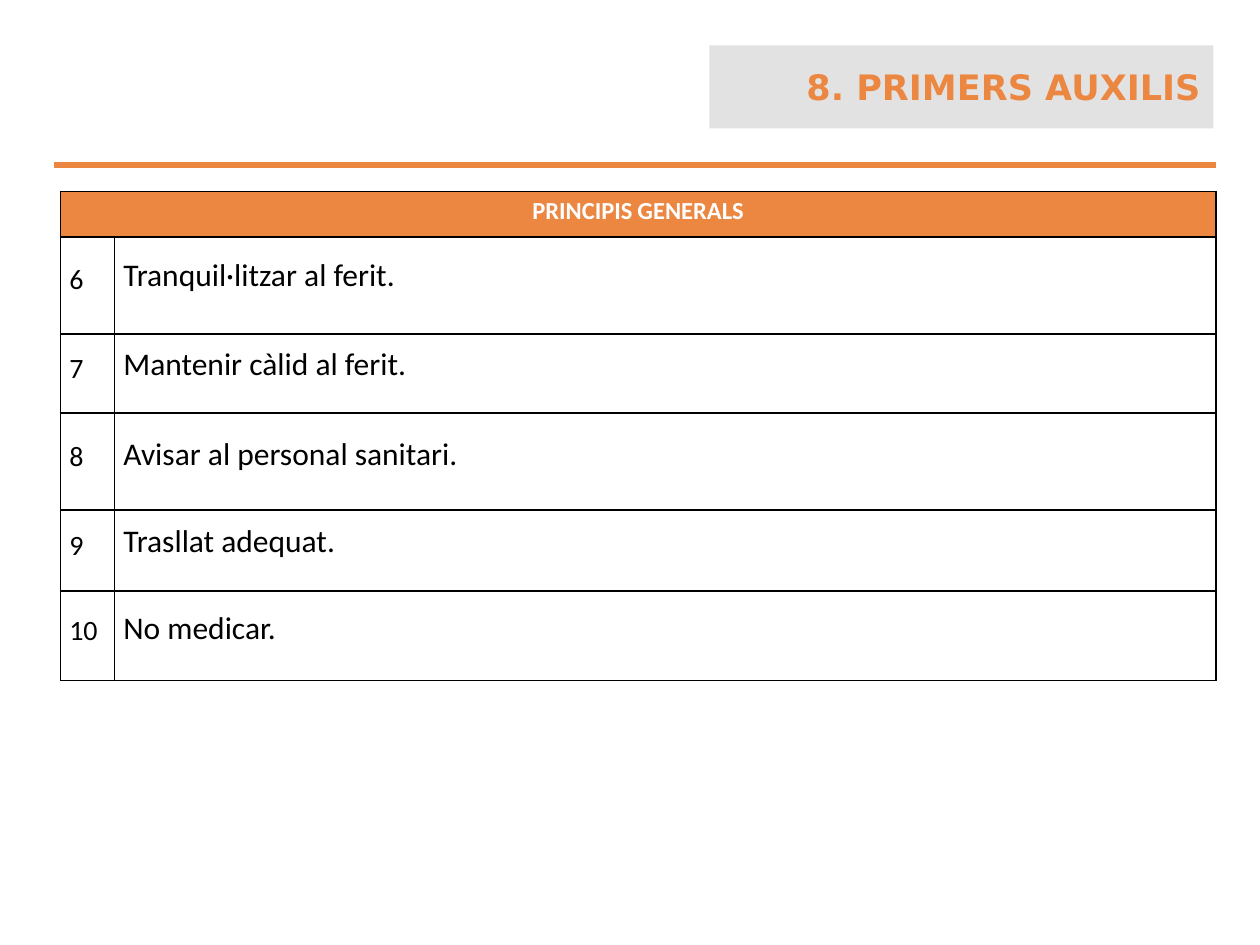
from lxml import etree
from pptx import Presentation
from pptx.dml.color import RGBColor
from pptx.enum.shapes import MSO_CONNECTOR
from pptx.enum.text import MSO_ANCHOR, MSO_AUTO_SIZE, PP_ALIGN
from pptx.oxml.ns import qn
from pptx.util import Inches, Pt

ORANGE = RGBColor(0xEC, 0x87, 0x41)
GREY = RGBColor(0xE2, 0xE2, 0xE2)
WHITE = RGBColor(0xFF, 0xFF, 0xFF)
BLACK = RGBColor(0, 0, 0)
MIDDLE, TOP = MSO_ANCHOR.MIDDLE, MSO_ANCHOR.TOP
CENTER, RIGHT, JUSTIFY = PP_ALIGN.CENTER, PP_ALIGN.RIGHT, PP_ALIGN.JUSTIFY

TITLE = "8. PRIMERS AUXILIS"
HEADING = [("PRINCIPIS", 14, True), (" ", 12, False), ("GENERALS", 14, True)]
FIRST_NUMBER = 6
# principle, row height, whether the text is raised by one line
PRINCIPLES = [
    ("Tranquil·litzar al ferit.", 0.77, True),
    ("Mantenir càlid al ferit.", 0.63, True),
    ("Avisar al personal sanitari.", 0.77, False),
    ("Trasllat adequat.", 0.64, True),
    ("No medicar.", 0.71, False),
]
HEADING_HEIGHT = 0.36
COLUMN_WIDTHS = [0.43, 8.74]
FIXED_LINE = Pt(13.8)


def set_font(font, **values):
    color = values.pop("color")
    for key, value in values.items():
        setattr(font, key, value)
    font.color.rgb = color


def format_cell(cell, anchor, raised=False):
    """Set margins, fill and a thin black border; raised keeps one line free below."""
    cell.vertical_anchor = anchor
    cell.margin_left = cell.margin_right = Inches(0.07)
    cell.margin_top = 0
    cell.margin_bottom = FIXED_LINE if raised else 0
    properties = cell._tc.get_or_add_tcPr()
    for side in ("lnL", "lnR", "lnT", "lnB"):
        border = etree.SubElement(properties, qn(f"a:{side}"), w=str(Pt(1)))
        fill = etree.SubElement(border, qn("a:solidFill"))
        etree.SubElement(fill, qn("a:srgbClr"), val=str(BLACK))


def write_entry(cell, text, size, spacing):
    paragraph = cell.text_frame.paragraphs[0]
    paragraph.alignment = JUSTIFY
    paragraph.line_spacing = spacing
    run = paragraph.add_run()
    run.text = text
    set_font(run.font, name="Calibri", size=Pt(size), bold=False, color=BLACK)
    cell.fill.background()


def add_title(slide):
    title = slide.shapes.title
    title.left, title.top = Inches(5.63), Inches(0.36)
    title.width, title.height = Inches(4), Inches(0.66)
    title.fill.solid()
    title.fill.fore_color.rgb = GREY
    frame = title.text_frame
    frame.text = TITLE
    frame.auto_size = MSO_AUTO_SIZE.NONE
    frame.vertical_anchor = MIDDLE
    frame.paragraphs[0].alignment = RIGHT
    set_font(frame.paragraphs[0].runs[0].font, name="DejaVu Sans",
             size=Pt(20), bold=True, color=ORANGE)


def add_rule(slide):
    rule = slide.shapes.add_connector(
        MSO_CONNECTOR.STRAIGHT, Inches(0.43), Inches(1.31), Inches(9.65), Inches(1.31))
    rule.line.color.rgb = ORANGE
    rule.line.width = Pt(3)
    etree.SubElement(rule._element.spPr, qn("a:effectLst"))


def add_principles(slide):
    heights = [HEADING_HEIGHT] + [height for _, height, _ in PRINCIPLES]
    table = slide.shapes.add_table(
        len(heights), len(COLUMN_WIDTHS), Inches(0.48), Inches(1.52),
        Inches(sum(COLUMN_WIDTHS)), Inches(sum(heights))).table
    table.horz_banding = False
    for column, width in zip(table.columns, COLUMN_WIDTHS):
        column.width = Inches(width)
    for row, height in zip(table.rows, heights):
        row.height = Inches(height)

    heading = table.cell(0, 0)
    heading.merge(table.cell(0, 1))
    for cell in table.rows[0].cells:
        format_cell(cell, TOP)
        cell.fill.solid()
        cell.fill.fore_color.rgb = ORANGE
    paragraph = heading.text_frame.paragraphs[0]
    paragraph.alignment = CENTER
    paragraph.line_spacing = 1.15
    for text, size, bold in HEADING:
        run = paragraph.add_run()
        run.text = text
        set_font(run.font, name="Calibri", size=Pt(size), bold=bold, color=WHITE)

    for index, (principle, _, raised) in enumerate(PRINCIPLES):
        number_cell, principle_cell = table.rows[index + 1].cells
        format_cell(number_cell, MIDDLE)
        format_cell(principle_cell, MIDDLE, raised)
        write_entry(number_cell, str(FIRST_NUMBER + index), 16, FIXED_LINE)
        write_entry(principle_cell, principle, 18, 1.15 if raised else FIXED_LINE)


def main():
    deck = Presentation()
    deck.slide_width, deck.slide_height = Inches(10), Inches(7.5)
    slide = deck.slides.add_slide(deck.slide_layouts[5])
    add_rule(slide)
    add_principles(slide)
    add_title(slide)
    deck.save("out.pptx")


if __name__ == "__main__":
    main()
